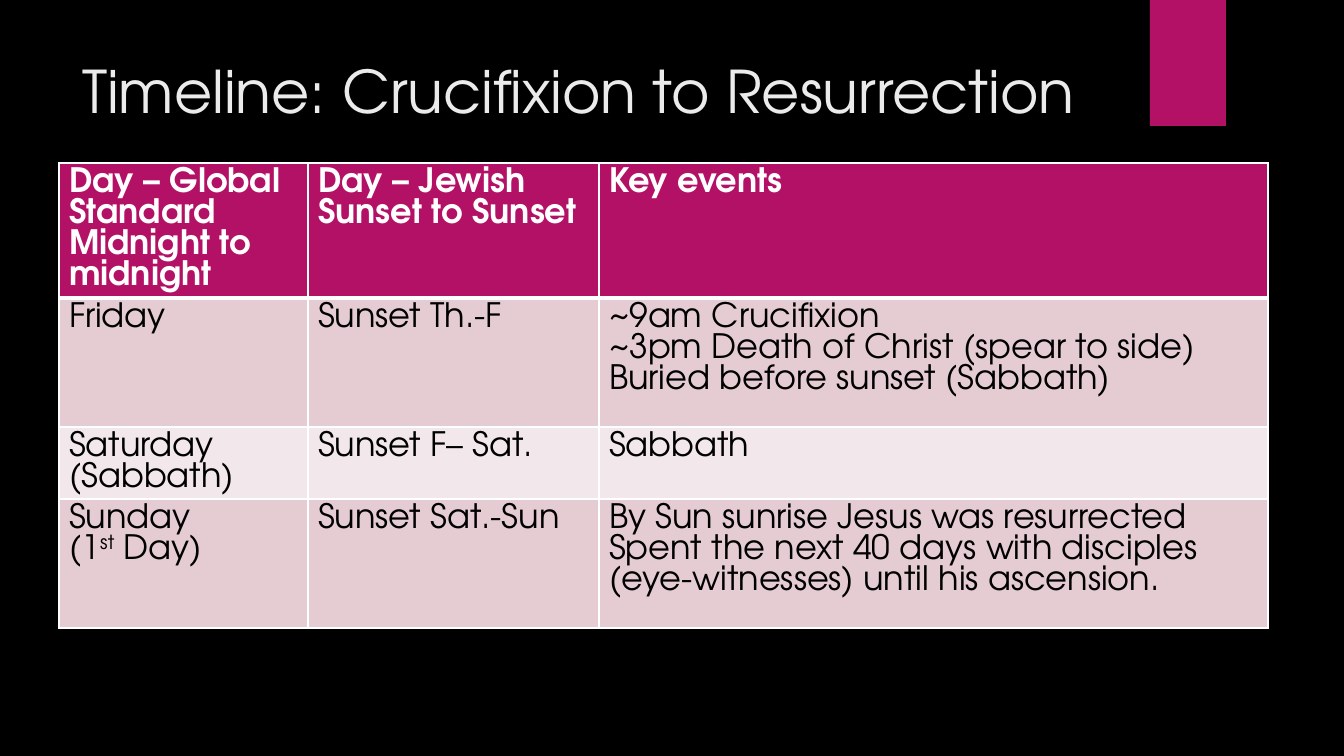
from lxml.etree import SubElement
from pptx import Presentation
from pptx.dml.color import RGBColor
from pptx.enum.shapes import MSO_SHAPE as Shape
from pptx.enum.text import MSO_ANCHOR as Anchor, PP_ALIGN as Align
from pptx.oxml.ns import qn
from pptx.util import Emu, Pt

COLORS = {"background": "000000", "accent": "B31166", "title": "EBEBEB",
          "white": "FFFFFF", "black": "000000", "dark": "E5CCD3", "light": "F2E7EA"}
COLORS_RGB = {name: RGBColor.from_string(value) for name, value in COLORS.items()}
FONT = "TeX Gyre Adventor"
PX = 914400 / 100.8


def px(*lengths):
    return [Emu(round(length * PX)) for length in lengths]


def format_font(font, size, color, bold=False):
    values = {"name": FONT, "size": Pt(size), "bold": bold}
    for name, value in values.items():
        setattr(font, name, value)
    font.color.rgb = COLORS_RGB[color]


presentation = Presentation()
presentation.slide_width, presentation.slide_height = px(1344, 756)
slide = presentation.slides.add_slide(presentation.slide_layouts[5])
slide.background.fill.solid()
slide.background.fill.fore_color.rgb = COLORS_RGB["background"]

# Accent tab at the top edge
tab = slide.shapes.add_shape(Shape.RECTANGLE, *px(1150, 0, 76, 126))
tab.shadow.inherit = False
tab.fill.solid()
tab.fill.fore_color.rgb = COLORS_RGB["accent"]
tab.line.fill.background()

# Title
title = slide.shapes.title
title.left, title.top, title.width, title.height = px(72, 50, 1037, 154)
title.text_frame.text = "Timeline: Crucifixion to Resurrection"
title.text_frame.word_wrap = True
title.text_frame.vertical_anchor = Anchor.TOP
title_paragraph = title.text_frame.paragraphs[0]
title_paragraph.alignment = Align.LEFT
format_font(title_paragraph.font, 42, "title")

# Timeline table: each cell is a list of paragraphs, each a string or a list of runs
ROWS = [
    [["Day – Global Standard", "Midnight to midnight"],
     ["Day – Jewish", "Sunset to Sunset"],
     ["Key events"]],
    [["Friday"],
     ["Sunset Th.-F"],
     ["~9am Crucifixion", "~3pm Death of Christ (spear to side)",
      "Buried before sunset (Sabbath)"]],
    [["Saturday (Sabbath)"], ["Sunset F– Sat."], ["Sabbath"]],
    [["Sunday", ["(1", "st", " Day)"]],
     ["Sunset Sat.-Sun"],
     ["By Sun sunrise Jesus was resurrected",
      "Spent the next 40 days with disciples (eye-witnesses) until his ascension."]],
]
COLUMN_WIDTHS = [249, 291, 669]
ROW_HEIGHTS = [135, 129, 72, 129]
ROW_FILLS = ["accent", "dark", "light", "dark"]

table = slide.shapes.add_table(len(ROWS), len(COLUMN_WIDTHS),
                               *px(59, 163, sum(COLUMN_WIDTHS), sum(ROW_HEIGHTS))).table
for column, width in zip(table.columns, px(*COLUMN_WIDTHS)):
    column.width = width
for row, height in zip(table.rows, px(*ROW_HEIGHTS)):
    row.height = height

for row_index, row in enumerate(ROWS):
    header = row_index == 0
    for column_index, paragraphs in enumerate(row):
        cell = table.cell(row_index, column_index)

        # Borders, thick below the header
        properties = cell._tc.get_or_add_tcPr()
        widths = {"lnL": 1, "lnR": 1, "lnT": 3 if row_index == 1 else 1,
                  "lnB": 3 if header else 1}
        for side, width in widths.items():
            border = SubElement(properties, qn(f"a:{side}"), w=str(Pt(width)))
            fill = SubElement(border, qn("a:solidFill"))
            SubElement(fill, qn("a:srgbClr"), val=COLORS["white"])
        cell.fill.solid()
        cell.fill.fore_color.rgb = COLORS_RGB[ROW_FILLS[row_index]]

        # Text
        for index, content in enumerate(paragraphs):
            frame = cell.text_frame
            paragraph = frame.add_paragraph() if index else frame.paragraphs[0]
            paragraph.line_spacing = Pt(22.1)
            for text in [content] if isinstance(content, str) else content:
                run = paragraph.add_run()
                run.text = text
                format_font(run.font, 24, "white" if header else "black", header)
                if text == "st":
                    run._r.get_or_add_rPr().set("baseline", "30000")

presentation.save("out.pptx")
